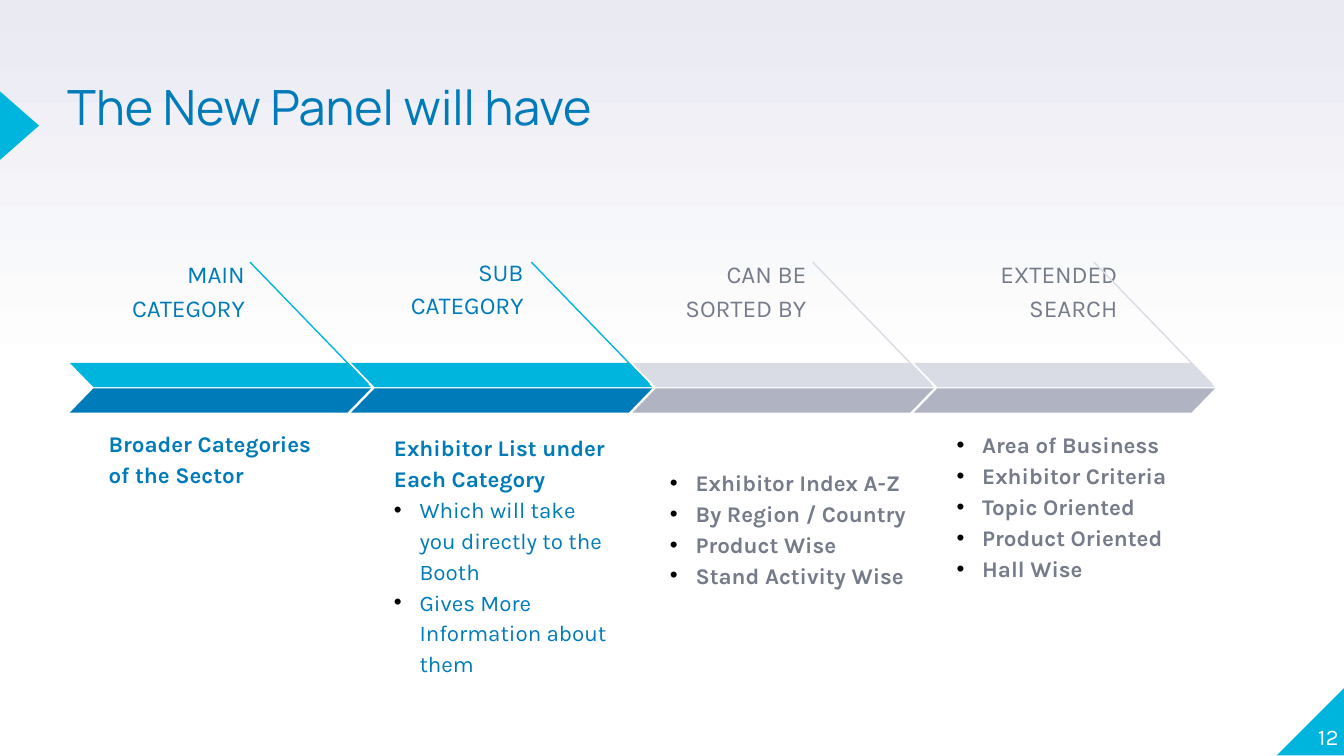
from dataclasses import dataclass

from lxml.etree import SubElement
from pptx import Presentation
from pptx.dml.color import RGBColor
from pptx.enum.shapes import MSO_CONNECTOR, MSO_SHAPE
from pptx.enum.text import MSO_ANCHOR, PP_ALIGN
from pptx.oxml.ns import qn
from pptx.util import Inches, Pt


@dataclass(frozen=True)
class Theme:
    cyan: str = "00B5DD"
    blue: str = "007BB9"
    light: str = "DADCE5"
    mid: str = "B0B3C1"
    gray: str = "757B89"
    white: str = "FFFFFF"
    haze: str = "E9EAF2"
    black: str = "000000"
    head: str = "Manrope"
    font: str = "Karla"
    mark: str = "Arial"
    title: int = 26
    label: int = 13
    body: int = 12


T = Theme()
WIDE = 10
HIGH = WIDE * 9 / 16
COOL = (T.cyan, T.blue, T.blue)    # upper band, lower band, text
PALE = (T.light, T.mid, T.gray)

# Each step: colours, label, label box, items (text, bullet, bold), items box
# Boxes are left, top, width, height relative to the step
STEPS = [
    (COOL, "MAIN CATEGORY", (0.14, 0, 1.26, 0.29),
     [("Broader Categories of the Sector", False, True)],
     (0.19, 1.38, 1.84, 0.55)),
    (COOL, "SUB CATEGORY", (0.12, -0.02, 1.26, 0.29),
     [("Exhibitor List under Each Category", False, True),
      ("Which will take you directly to the Booth", True, False),
      ("Gives More Information about them", True, False)],
     (0.22, 2.79, 1.84, 0.55)),
    (PALE, "CAN BE SORTED BY", (0.28, 0, 1.11, 0.29),
     [(text, True, True) for text in (
         "Exhibitor Index A-Z", "By Region / Country",
         "Product Wise", "Stand Activity Wise")],
     (0.18, 1.34, 1.98, 1.34)),
    (PALE, "EXTENDED SEARCH", (0.29, 0, 1.32, 0.29),
     [(text, True, True) for text in (
         "Area of Business", "Exhibitor Criteria", "Topic Oriented",
         "Product Oriented", "Hall Wise")],
     (0.22, 2.08, 1.84, 0.55)),
]


def tint(hue):
    return RGBColor.from_string(hue)


def add_form(slide, kind, box, hue, flip=False):
    form = slide.shapes.add_shape(kind, *map(Inches, box))
    form.shadow.inherit = False
    form.fill.solid()
    form.fill.fore_color.rgb = tint(hue)
    form.line.fill.background()
    if flip:
        form._element.spPr.find(qn("a:xfrm")).set("flipH", "1")
    return form


def add_text(slide, box, lines, size, hue, font=T.font, inset=0.1,
             anchor=MSO_ANCHOR.TOP, align=PP_ALIGN.LEFT, space=1.15):
    """Place lines of (text, bullet, bold) in one text box."""
    frame = slide.shapes.add_textbox(*map(Inches, box)).text_frame
    frame.word_wrap = True
    frame.vertical_anchor = anchor
    frame.margin_left = frame.margin_right = Inches(inset)
    frame.margin_top = frame.margin_bottom = Inches(inset)
    frame.text = "\n".join(text for text, _, _ in lines)
    for para, (_, mark, bold) in zip(frame.paragraphs, lines):
        para.alignment = align
        para.line_spacing = space
        for run in para.runs:
            run.font.name = font
            run.font.size = Pt(size)
            run.font.bold = bold
            run.font.color.rgb = tint(hue)
        if mark:
            add_mark(para)


def add_mark(para):
    """Give a paragraph a black bullet and a hanging indent."""
    props = para._p.get_or_add_pPr()
    props.set("marL", str(Inches(0.19)))
    props.set("indent", str(-Inches(0.19)))
    shade = SubElement(props, qn("a:buClr"))
    SubElement(shade, qn("a:srgbClr")).set("val", T.black)
    SubElement(props, qn("a:buFont")).set("typeface", T.mark)
    SubElement(props, qn("a:buChar")).set("char", "•")


def add_line(slide, start, end, hue):
    line = slide.shapes.add_connector(
        MSO_CONNECTOR.STRAIGHT, *map(Inches, (*start, *end)))
    line.line.color.rgb = tint(hue)
    line.line.width = Pt(0.75)
    SubElement(line._element.spPr, qn("a:effectLst"))


def add_back(slide):
    fill = slide.background.fill
    fill.gradient()
    fill.gradient_angle = 90
    for stop, spot, hue in zip(fill.gradient_stops, (0.5, 1), (T.white, T.haze)):
        stop.position = spot
        stop.color.rgb = tint(hue)


def add_title(slide, left, top, wide, high):
    # Pointer at the slide edge
    arrow = add_form(slide, MSO_SHAPE.ISOSCELES_TRIANGLE,
                     (left - 0.61, top + 0.13, 0.51, 0.29), T.cyan)
    arrow.rotation = 90
    add_text(slide, (left, top, wide, high),
             [("The New Panel will have", False, False)],
             T.title, T.blue, font=T.head, inset=0, space=0.8)


def add_page(slide, left, top, side):
    add_form(slide, MSO_SHAPE.RIGHT_TRIANGLE, (left, top, side, side), T.cyan, True)
    add_text(slide, (left - 0.04, top - 0.04, 0.5, side), [("12", False, False)],
             T.body, T.white, inset=0, anchor=MSO_ANCHOR.BOTTOM,
             align=PP_ALIGN.RIGHT, space=1)


def add_step(slide, left, top, wide, step):
    (upper, lower, ink), label, spot, items, area = step

    def place(box):
        return (left + box[0], top + box[1], *box[2:])

    # Label and body text
    add_text(slide, place(spot), [(label, False, False)], T.label, ink,
             align=PP_ALIGN.RIGHT)
    add_text(slide, place(area), items, T.body, ink, anchor=MSO_ANCHOR.BOTTOM)
    # Slanted line and the two halves of the arrow
    add_line(slide, place((1.34, 0.15)), place((2.22, 1.06)), upper)
    for drop, hue, flip in ((0.9, upper, True), (1.09, lower, False)):
        band = add_form(slide, MSO_SHAPE.PARALLELOGRAM,
                        place((0, drop, wide, 0.18)), hue, flip)
        band.adjustments[0] = 0.97


def add_flow(slide, left, top, wide):
    band = 2.24
    pitch = (wide - band) / (len(STEPS) - 1)
    for i, step in enumerate(STEPS):
        add_step(slide, left + i * pitch, top, band, step)


def main():
    deck = Presentation()
    deck.slide_width, deck.slide_height = Inches(WIDE), Inches(HIGH)
    slide = deck.slides.add_slide(deck.slide_layouts[6])
    add_back(slide)
    add_title(slide, 0.5, 0.66, 6.17, 0.46)
    add_page(slide, 9.5, 5.11, 0.51)
    add_flow(slide, 0.52, 1.8, 8.52)
    deck.save("out.pptx")


if __name__ == "__main__":
    main()
